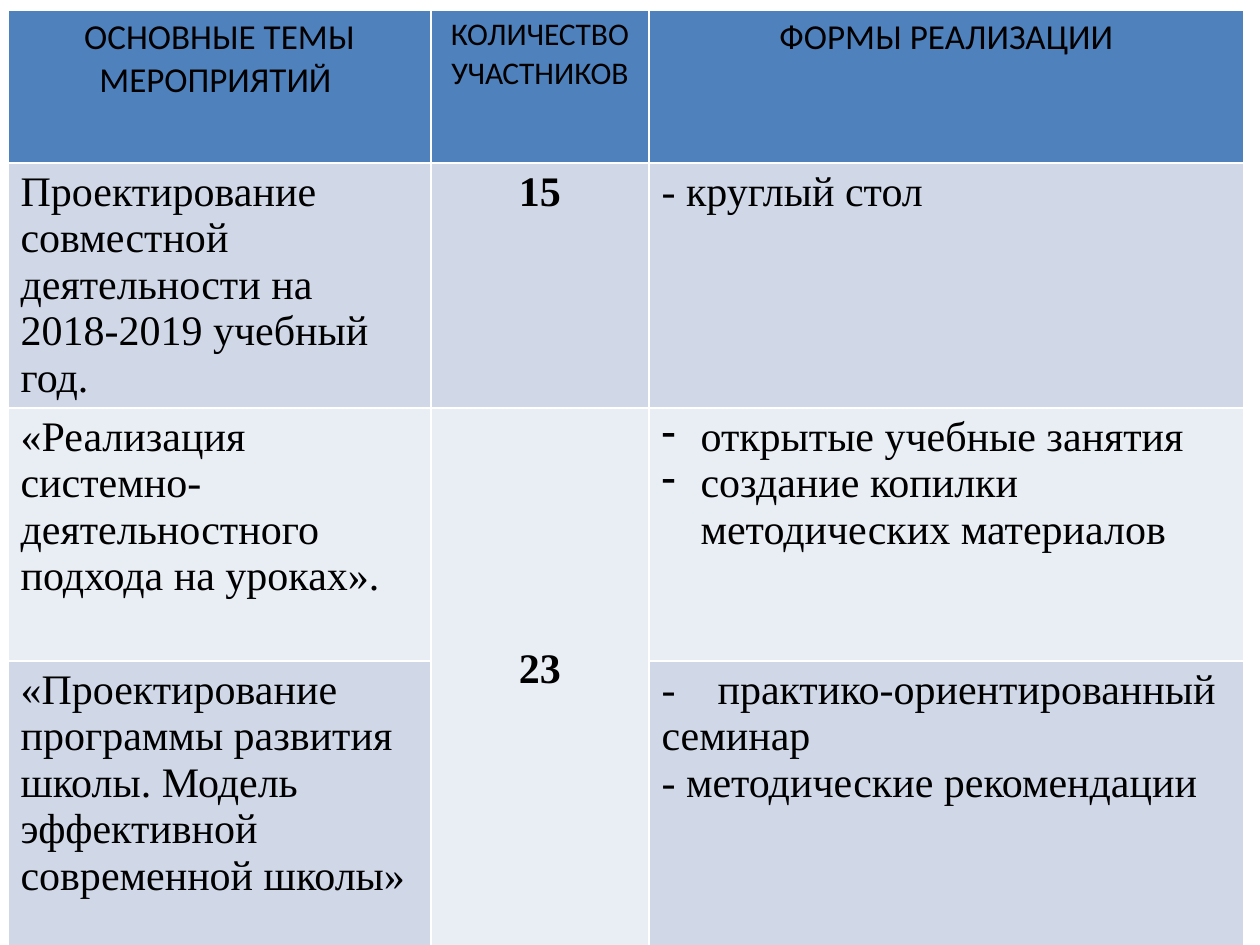
from dataclasses import dataclass

from lxml import etree
from pptx import Presentation
from pptx.dml.color import RGBColor
from pptx.enum.text import PP_ALIGN
from pptx.oxml.ns import qn
from pptx.util import Pt

LEFT, MID = PP_ALIGN.LEFT, PP_ALIGN.CENTER
SCALE = 914400 / 126
HEAD, DARK, PALE = "4F81BD", "D0D8E8", "E9EDF4"
SERIF, SANS = "Times New Roman", "Calibri"
COLS = [423, 218, 595]
ROWS = [153, 245, 253, 353]


@dataclass
class Entry:
    row: int
    col: int
    lines: list[str]
    fill: str
    size: int = 24
    font: str = SERIF
    bold: bool = False
    align: PP_ALIGN = LEFT
    top: int = 6
    hang: int = 0
    tab: int = 0


ENTRIES = [
    Entry(0, 0, ["ОСНОВНЫЕ ТЕМЫ МЕРОПРИЯТИЙ "], HEAD, 20, SANS, align=MID),
    Entry(0, 1, ["КОЛИЧЕСТВО УЧАСТНИКОВ"], HEAD, 18, SANS, align=MID),
    Entry(0, 2, ["ФОРМЫ РЕАЛИЗАЦИИ"], HEAD, 20, SANS, align=MID),
    Entry(1, 0, ["Проектирование совместной деятельности на 2018-2019 учебный год."], DARK),
    Entry(1, 1, ["15"], DARK, bold=True, align=MID),
    Entry(1, 2, ["- круглый стол"], DARK),
    Entry(2, 0, ["«Реализация системно-деятельностного подхода на уроках»."], PALE),
    Entry(2, 1, ["23"], PALE, bold=True, align=MID, top=238),
    Entry(2, 2, ["открытые учебные занятия", "создание копилки методических материалов"],
          PALE, hang=39),
    Entry(3, 0, ["«Проектирование программы развития школы. Модель эффективной современной школы»"],
          DARK),
    Entry(3, 2, ["-\tпрактико-ориентированный семинар", "- методические рекомендации"],
          DARK, tab=56),
]


def px(n: int) -> int:
    return round(n * SCALE)


def paint(fill, code: str) -> None:
    fill.solid()
    fill.fore_color.rgb = RGBColor.from_string(code)


def edge(cell) -> None:
    props = cell._tc.get_or_add_tcPr()
    for side in ("a:lnL", "a:lnR", "a:lnT", "a:lnB"):
        line = etree.SubElement(props, qn(side), w=str(Pt(1)))
        solid = etree.SubElement(line, qn("a:solidFill"))
        etree.SubElement(solid, qn("a:srgbClr"), val="FFFFFF")


def indent(par, entry: Entry) -> None:
    props = par._p.get_or_add_pPr()
    if entry.hang:
        props.set("marL", str(px(entry.hang)))
        props.set("indent", str(-px(entry.hang)))
        etree.SubElement(props, qn("a:buFontTx"))
        etree.SubElement(props, qn("a:buChar"), char="-")
    if entry.tab:
        stops = etree.SubElement(props, qn("a:tabLst"))
        etree.SubElement(stops, qn("a:tab"), pos=str(px(entry.tab)), algn="l")


def write(table, entry: Entry) -> None:
    cell = table.cell(entry.row, entry.col)
    paint(cell.fill, entry.fill)
    cell.margin_top = px(entry.top)
    cell.text_frame.text = "\n".join(entry.lines)
    for par in cell.text_frame.paragraphs:
        par.alignment = entry.align
        indent(par, entry)
        for run in par.runs:
            run.font.name = entry.font
            run.font.size = Pt(entry.size)
            run.font.bold = entry.bold
            paint(run.font.fill, "000000")


def main() -> None:
    deck = Presentation()
    deck.slide_width, deck.slide_height = px(1260), px(945)
    slide = deck.slides.add_slide(deck.slide_layouts[6])
    frame = slide.shapes.add_table(len(ROWS), len(COLS), px(8), px(10),
                                   px(sum(COLS)), px(sum(ROWS)))
    table = frame.table
    for col, width in zip(table.columns, COLS):
        col.width = px(width)
    for row, height in zip(table.rows, ROWS):
        row.height = px(height)
    for cell in table.iter_cells():
        edge(cell)
    table.cell(2, 1).merge(table.cell(3, 1))
    for entry in ENTRIES:
        write(table, entry)
    deck.save("out.pptx")


if __name__ == "__main__":
    main()
